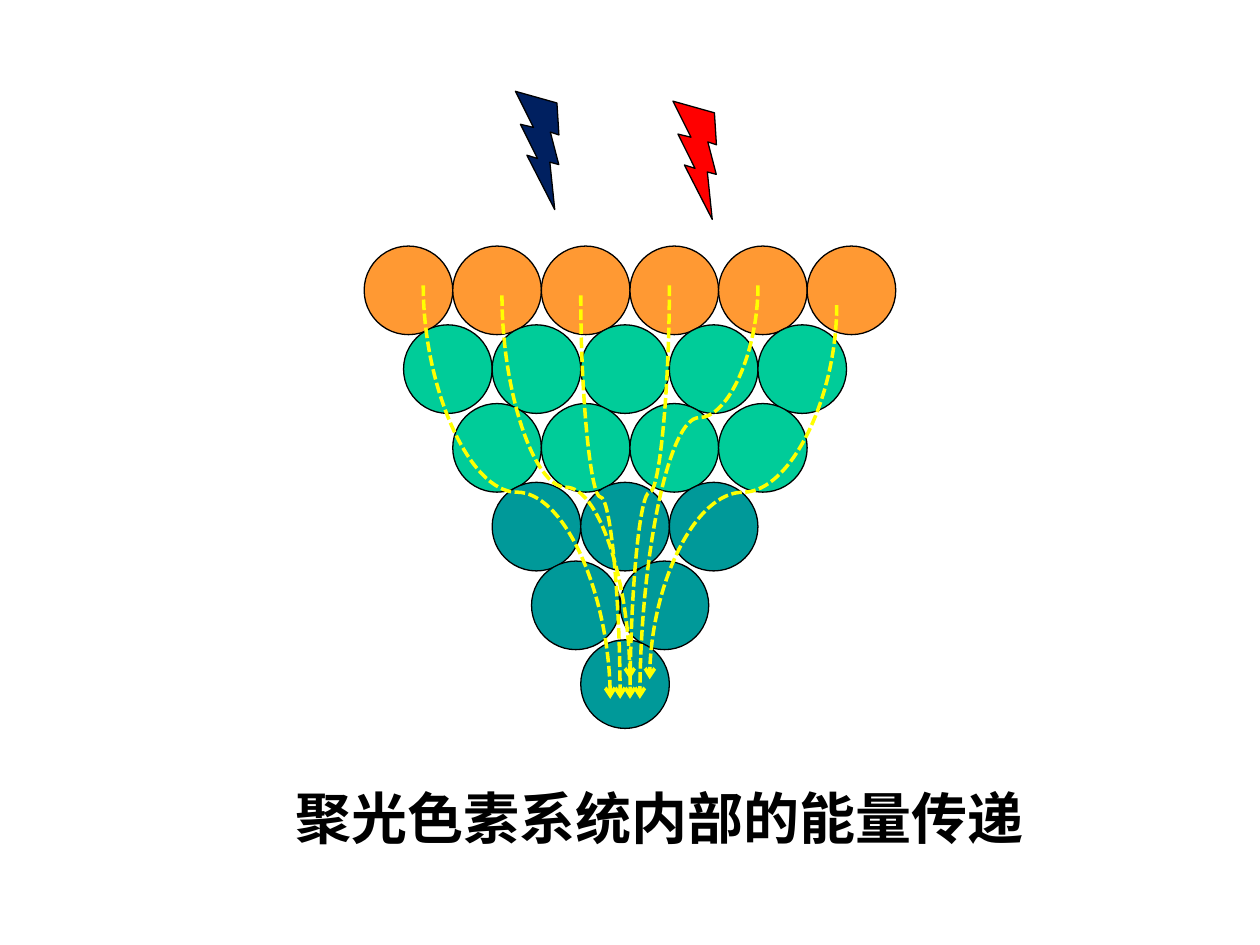
from dataclasses import dataclass

from lxml import etree
from pptx import Presentation
from pptx.dml.color import RGBColor
from pptx.enum import dml, shapes, text
from pptx.oxml import ns
from pptx.util import Pt


@dataclass(frozen=True)
class Theme:
    outer: str = "FF9933"
    middle: str = "00CC99"
    inner: str = "009999"
    outline: str = "000000"
    transfer: str = "FFFF00"
    blue_light: str = "002060"
    red_light: str = "FF0000"
    caption: str = "000000"
    font: str = "Times New Roman"
    caption_size: float = 32
    outline_width: float = 0.75
    transfer_width: float = 2


THEME = Theme()

# Indent from the left edge, number of pigments, colour
PIGMENT_ROWS = [
    (0, 6, THEME.outer),
    (22.5, 5, THEME.middle),
    (50.63, 4, THEME.middle),
    (73.13, 3, THEME.inner),
    (95.63, 2, THEME.inner),
    (123.75, 1, THEME.inner),
]

# Start x, start y, end x, end y relative to the pigments, bend as a share of the height
TRANSFER_PATHS = [
    (33.75, 22.5, 140.63, 258.75, 0.5),
    (78.75, 28.13, 151.88, 247.5, 0.5),
    (270, 33.75, 163.13, 247.5, 0.5),
    (225, 22.5, 157.5, 258.75, 0.32),
    (123.75, 28.13, 146.25, 258.75, 0.5),
    (174.38, 22.5, 151.88, 258.75, 0.5),
]


def add_filled(parent, kind, box, colour):
    shape = parent.shapes.add_shape(kind, *map(Pt, box))
    shape.shadow.inherit = False
    shape.fill.solid()
    shape.fill.fore_color.rgb = RGBColor.from_string(colour)
    shape.line.color.rgb = RGBColor.from_string(THEME.outline)
    shape.line.width = Pt(THEME.outline_width)
    return shape


def add_pigments(slide, box):
    """Stack rows of touching circles into a funnel."""
    left, top, width, height = box
    diameter = width / PIGMENT_ROWS[0][1]
    row_pitch = (height - diameter) / (len(PIGMENT_ROWS) - 1)
    group = slide.shapes.add_group_shape()
    for row, (indent, count, colour) in enumerate(PIGMENT_ROWS):
        for column in range(count):
            place = (left + indent + column * diameter, top + row * row_pitch,
                     diameter, diameter)
            add_filled(group, shapes.MSO_SHAPE.OVAL, place, colour)


def add_curved_arrow(parent, start, end, bend):
    """Draw a curve that leaves and arrives vertically: a sideways one, turned a quarter."""
    (x1, y1), (x2, y2) = start, end
    centre_x, centre_y = (x1 + x2) / 2, (y1 + y2) / 2
    half_width, half_height = (y2 - y1) / 2, abs(x2 - x1) / 2
    rightward = x2 > x1
    reach = half_width if rightward else -half_width
    connector = parent.shapes.add_connector(
        shapes.MSO_CONNECTOR.CURVE,
        Pt(centre_x + reach), Pt(centre_y - half_height),
        Pt(centre_x - reach), Pt(centre_y + half_height))
    connector.line.color.rgb = RGBColor.from_string(THEME.transfer)
    connector.line.width = Pt(THEME.transfer_width)
    connector.line.dash_style = dml.MSO_LINE.SQUARE_DOT

    properties = connector._element.spPr
    quarter_turns = 3 if rightward else 1
    properties.find(ns.qn("a:xfrm")).set("rot", str(quarter_turns * 90 * 60000))
    adjustments = properties.find(ns.qn("a:prstGeom")).find(ns.qn("a:avLst"))
    etree.SubElement(adjustments, ns.qn("a:gd"), name="adj1",
                     fmla=f"val {round(bend * 100000)}")
    etree.SubElement(properties.find(ns.qn("a:ln")), ns.qn("a:tailEnd"), type="arrow")
    etree.SubElement(properties, ns.qn("a:effectLst"))


def add_transfer_paths(slide, box):
    left, top = box[:2]
    group = slide.shapes.add_group_shape()
    for x1, y1, x2, y2, bend in TRANSFER_PATHS:
        add_curved_arrow(group, (left + x1, top + y1), (left + x2, top + y2), bend)


def add_light(slide, box):
    """Place two bolts at the left and right ends of the box."""
    left, top, width, height = box
    bolt_width, bolt_height = 58.5, 49.5
    group = slide.shapes.add_group_shape()
    for x, y, colour in (
            (left, top, THEME.blue_light),
            (left + width - bolt_width, top + height - bolt_height, THEME.red_light)):
        bolt = add_filled(group, shapes.MSO_SHAPE.LIGHTNING_BOLT,
                          (x, y, bolt_width, bolt_height), colour)
        bolt.rotation = 36.9


def add_caption(slide, box):
    text_frame = slide.shapes.add_textbox(*map(Pt, box)).text_frame
    text_frame.word_wrap = True
    text_frame.auto_size = text.MSO_AUTO_SIZE.SHAPE_TO_FIT_TEXT
    text_frame.text = "聚光色素系统内部的能量传递"
    paragraph = text_frame.paragraphs[0]
    paragraph.alignment = text.PP_ALIGN.CENTER
    font = paragraph.runs[0].font
    font.name = THEME.font
    font.size = Pt(THEME.caption_size)
    font.bold = True
    font.color.rgb = RGBColor.from_string(THEME.caption)


def main():
    presentation = Presentation()
    presentation.slide_width, presentation.slide_height = Pt(720), Pt(540)
    slide = presentation.slides.add_slide(presentation.slide_layouts[6])
    funnel = (208.13, 140.63, 303.75, 275.63)
    add_pigments(slide, funnel)
    add_caption(slide, (90, 444.25, 573.75, 46))
    add_transfer_paths(slide, funnel)
    add_light(slide, (279.2, 57.7, 148.5, 55.13))
    presentation.save("out.pptx")


if __name__ == "__main__":
    main()
